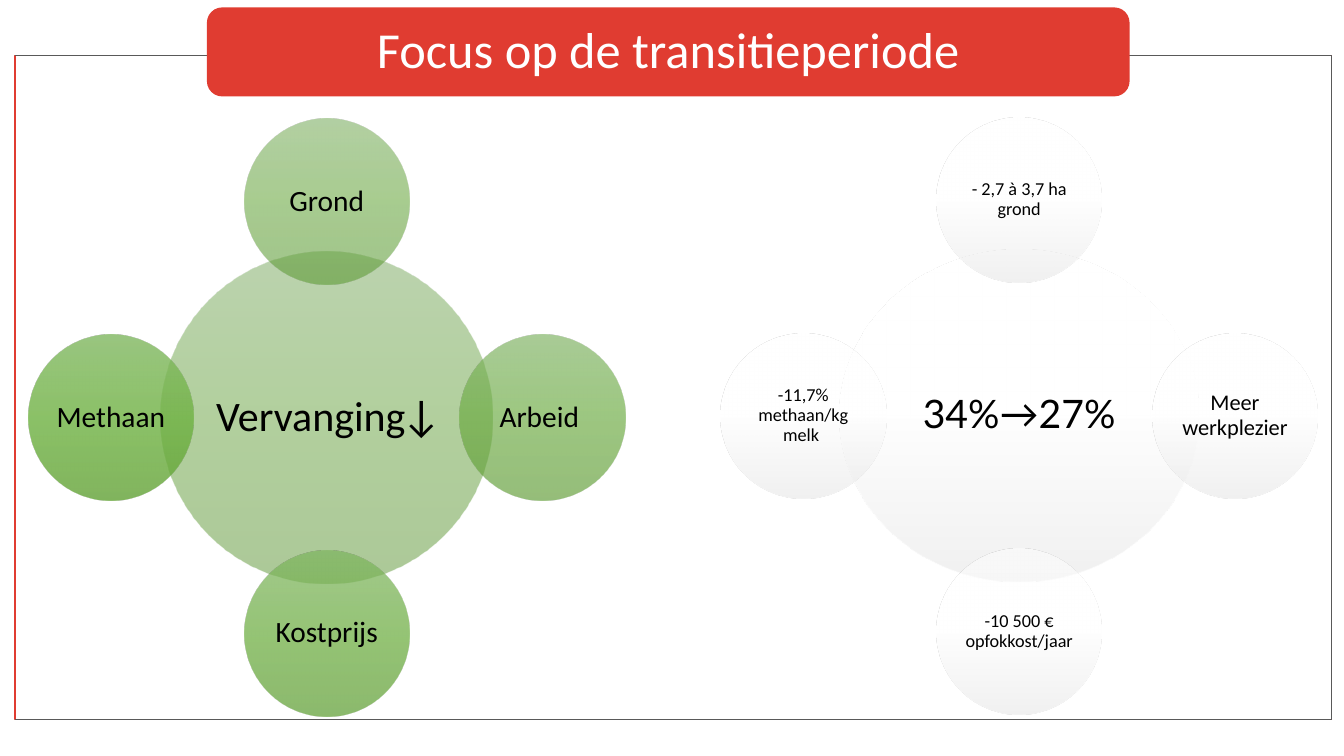
from lxml import etree
from pptx import Presentation, util as u
from pptx.dml.color import RGBColor
from pptx.enum import shapes, text
from pptx.oxml.ns import qn

COLORS = {"red": "E03C31", "grey": "595959", "white": "FFFFFF", "black": "000000"}
WHITE_STOPS = (["FFFFFF", "FFFFFF", "E3E3E3"], 50)
GREEN_STOPS = [
    (["78A95E", "65A23C", "599431"], 50),
    (["7BAD5F", "68A63E", "5B9833"], 57),
    (["7DB160", "6AAA3F", "5E9C34"], 65),
    (["7FB561", "6DAE41", "609F35"], 72),
    (["81B862", "70B343", "63A337"], 80),
]
DIRECTIONS = [(0, -1), (1, 0), (0, 1), (-1, 0)]
SATELLITE_SIZE = 118.1
ORBIT = 154.2


def write_text(shape, spans, size, color, side_inset, end_inset):
    """Write one centred paragraph made of (wording, font) spans."""
    frame = shape.text_frame
    frame.word_wrap = True
    frame.vertical_anchor = text.MSO_ANCHOR.MIDDLE
    frame.margin_left = frame.margin_right = u.Pt(side_inset)
    frame.margin_top = frame.margin_bottom = u.Pt(end_inset)
    para = frame.paragraphs[0]
    para.alignment = text.PP_ALIGN.CENTER
    para.line_spacing = 0.9
    for wording, font in spans:
        span = para.add_run()
        span.text = wording
        span.font.name = font
        span.font.size = u.Pt(size)
        span.font.color.rgb = RGBColor.from_string(COLORS[color])


def fill_gradient(shape, colors, opacity):
    """Fill a shape from top to bottom with a translucent gradient."""
    shape.fill.gradient()
    gradient = shape._element.spPr.find(qn("a:gradFill"))
    stops = gradient.find(qn("a:gsLst"))
    for stop in list(stops):
        stops.remove(stop)
    for index, color in enumerate(colors):
        stop = etree.SubElement(stops, qn("a:gs"), pos=str(index * 50000))
        tint = etree.SubElement(stop, qn("a:srgbClr"), val=color)
        etree.SubElement(tint, qn("a:alpha"), val=str(opacity * 1000))
    gradient.find(qn("a:lin")).set("ang", "5400000")


def add_circle(page, center, width, height, stops, spans, size, inset):
    """Add a gradient ellipse around a centre point with its label."""
    x, y = center
    circle = page.shapes.add_shape(
        shapes.MSO_SHAPE.OVAL, u.Pt(x - width / 2), u.Pt(y - height / 2), u.Pt(width), u.Pt(height)
    )
    circle.shadow.inherit = False
    circle.line.fill.background()
    fill_gradient(circle, *stops)
    write_text(circle, spans, size, "black", inset, inset)


def add_radial(page, center, hub_width, hub, satellites, stops, inset):
    """Add a hub with four satellites above, right, below and left."""
    spans, size = hub
    add_circle(page, center, hub_width, 236.9, stops[0], spans, size, 2.9)
    for (dx, dy), (label, size), stop in zip(DIRECTIONS, satellites, stops[1:]):
        spot = (center[0] + dx * ORBIT, center[1] + dy * ORBIT)
        add_circle(page, spot, SATELLITE_SIZE, SATELLITE_SIZE, stop, [(label, "Calibri")], size, inset)


def add_frame(page, box):
    """Draw the red frame with grey top, right and bottom edges."""
    left, top, width, height = box
    frame = page.shapes.add_shape(shapes.MSO_SHAPE.RECTANGLE, *map(u.Pt, box))
    frame.fill.background()
    frame.line.color.rgb = RGBColor.from_string(COLORS["red"])
    builder = page.shapes.build_freeform(u.Pt(left), u.Pt(top))
    right, bottom = left + width, top + height
    corners = [(right, top), (right, bottom), (left, bottom)]
    builder.add_line_segments([(u.Pt(x), u.Pt(y)) for x, y in corners], close=False)
    edges = builder.convert_to_shape()
    edges.fill.background()
    edges.line.color.rgb = RGBColor.from_string(COLORS["grey"])
    for outline in (frame, edges):
        outline.shadow.inherit = False
        outline.line.width = u.Pt(1)


def add_title(page, box, wording):
    """Add the rounded red title bar."""
    bar = page.shapes.add_shape(shapes.MSO_SHAPE.ROUNDED_RECTANGLE, *map(u.Pt, box))
    bar.shadow.inherit = False
    bar.fill.solid()
    bar.fill.fore_color.rgb = RGBColor.from_string(COLORS["red"])
    bar.line.color.rgb = RGBColor.from_string(COLORS["red"])
    bar.line.width = u.Pt(1)
    write_text(bar, [(wording, "Calibri")], 36, "white", 25.2, 0)


def main():
    """Build the slide and save the deck."""
    deck = Presentation()
    deck.slide_width, deck.slide_height = u.Pt(960), u.Pt(540)
    page = deck.slides.add_slide(deck.slide_layouts[6])
    add_frame(page, (10.8, 39.6, 940.3, 474.5))
    add_title(page, (148.3, 5.8, 658.1, 62.6), "Focus op de transitieperiode")
    add_radial(
        page, (233.4, 298.3), 236.9,
        ([("Vervanging", "Calibri"), ("↓", "Lato")], 30),
        [("Grond", 21), ("Arbeid ", 21), ("Kostprijs", 21), ("Methaan", 21)],
        GREEN_STOPS, 2.2,
    )
    add_radial(
        page, (728, 297), 256.3,
        ([("34%→27%", "Lato")], 28),
        [
            ("- 2,7 à 3,7 ha grond", 13),
            ("Meer werkplezier", 16),
            ("-10 500 € opfokkost/jaar", 13),
            ("-11,7% methaan/kg melk ", 13),
        ],
        [WHITE_STOPS] * 5, 1.4,
    )
    deck.save("out.pptx")


if __name__ == "__main__":
    main()
